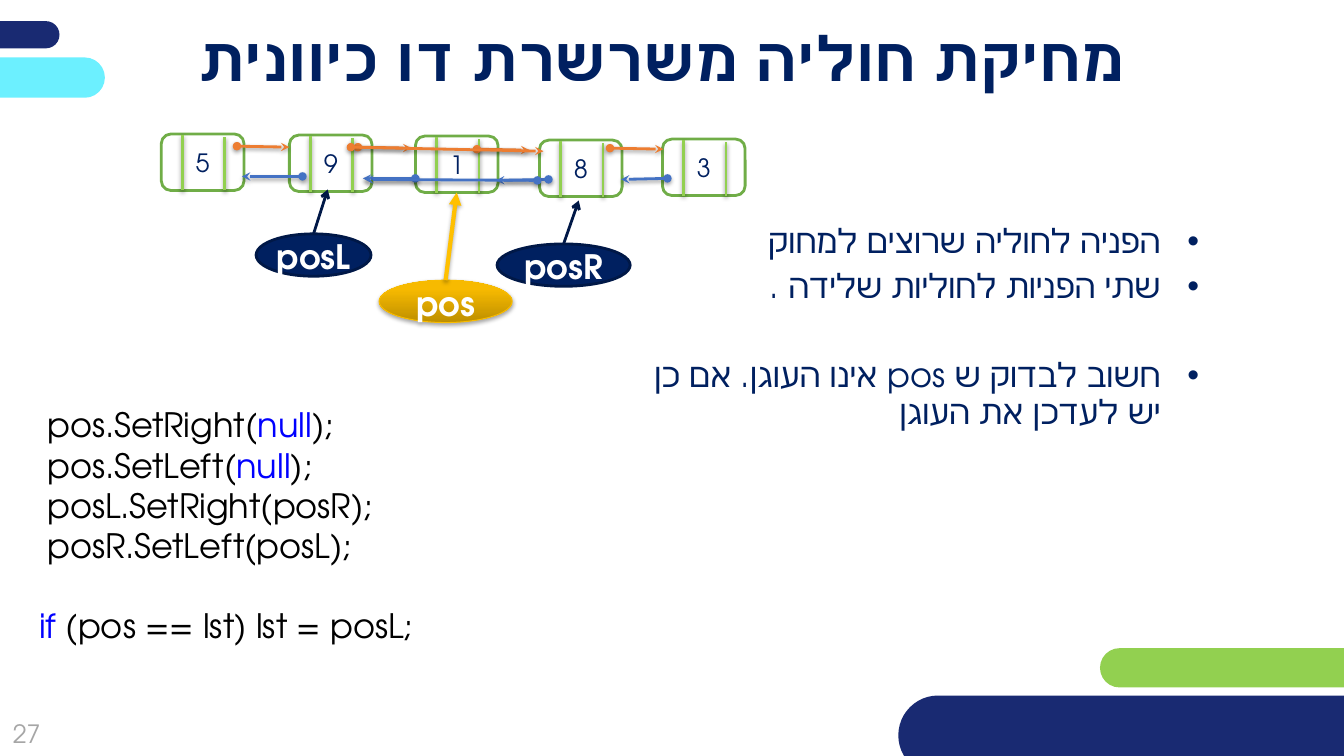
from dataclasses import dataclass
from lxml.etree import SubElement
from pptx import Presentation
from pptx.dml.color import RGBColor
from pptx.enum.shapes import MSO_CONNECTOR, MSO_SHAPE
from pptx.enum.text import MSO_ANCHOR, PP_ALIGN
from pptx.oxml.ns import qn
from pptx.util import Inches, Pt


@dataclass(frozen=True)
class Theme:
    font: str = "TeX Gyre Adventor"
    navy: str = "002060"
    navy_edge: str = "001847"
    band: str = "192A72"
    cyan: str = "6CF0FF"
    lime: str = "92D050"
    green: str = "70AD47"
    orange: str = "ED7D31"
    blue: str = "4472C4"
    gold: str = "FFC000"
    gold_edge: str = "F9BC00"
    gold_dark: str = "BE8F00"
    gold_light: str = "F7BA00"
    keyword: str = "0000FF"
    black: str = "000000"
    white: str = "FFFFFF"
    gray: str = "A6A6A6"
    title: int = 44
    body: int = 24
    small: int = 18


theme = Theme()
color = RGBColor.from_string
CELL = Inches(0.1)

deck = Presentation()
deck.slide_width, deck.slide_height = Inches(13.33), Inches(7.5)
slide = deck.slides.add_slide(deck.slide_layouts[6])
shapes = slide.shapes


def write(shape, lines, size, align=PP_ALIGN.LEFT, rtl=False, bold=False, anchor=MSO_ANCHOR.TOP):
    frame = shape.text_frame
    frame.word_wrap = True
    frame.vertical_anchor = anchor
    for index, line in enumerate(lines):
        paragraph = frame.add_paragraph() if index else frame.paragraphs[0]
        paragraph.alignment = align
        if rtl:
            paragraph._p.get_or_add_pPr().set("rtl", "1")
        for words, ink in line:
            run = paragraph.add_run()
            run.text = words
            run.font.size, run.font.bold = Pt(size), bold
            run.font.color.rgb = color(ink)
            run.font.name = theme.font
            SubElement(run._r.rPr, qn("a:cs"), typeface=theme.font)
    return frame


def set_shadow(shape, alpha, distance):
    properties = shape._element.spPr
    effects = properties.find(qn("a:effectLst"))
    if effects is None:
        effects = SubElement(properties, qn("a:effectLst"))
    if alpha:
        outer = SubElement(effects, qn("a:outerShdw"), blurRad=str(Pt(3.1)),
                           dist=str(Pt(distance)), dir="5400000", rotWithShape="0")
        ink = SubElement(outer, qn("a:srgbClr"), val=theme.black)
        SubElement(ink, qn("a:alpha"), val=str(alpha * 1000))


for left, top, width, height, paint in (
    (-26.6, 2.1, 32.5, 2.7, theme.band),
    (109.1, 64.3, 52.1, 3.9, theme.lime),
    (-22.1, 5.7, 32.5, 4, theme.cyan),
    (89.1, 69, 56.6, 7.9, theme.band),
):
    band = shapes.add_shape(MSO_SHAPE.ROUNDED_RECTANGLE, *(int(n * CELL) for n in (left, top, width, height)))
    band.adjustments[0] = 0.5
    band.shadow.inherit = False
    band.fill.solid()
    band.fill.fore_color.rgb = color(paint)
    band.line.fill.background()

page_number, heading, notes, unlink_code, anchor_code = (
    shapes.add_textbox(*(int(n * CELL) for n in area))
    for area in ((-1.8, 69.9, 8.9, 5.7), (11.2, 1.7, 107.2, 7.9), (63.1, 21.8, 57.8, 23.1),
                 (3.7, 39.6, 66.7, 17.2), (2.9, 59.5, 79.1, 5))
)
write(page_number, [[("27", theme.gray)]], theme.small, PP_ALIGN.CENTER, anchor=MSO_ANCHOR.MIDDLE)
write(heading, [[("מחיקת חוליה משרשרת דו כיוונית ", theme.navy)]], theme.title,
      PP_ALIGN.CENTER, rtl=True, bold=True, anchor=MSO_ANCHOR.MIDDLE)

points = ("הפניה לחוליה שרוצים למחוק ", "שתי הפניות לחוליות שלידה . ",
          "חשוב לבדוק ש pos אינו העוגן. אם כן יש לעדכן את העוגן ")
points_frame = write(notes, [[(point, theme.navy)] for point in points], theme.body, PP_ALIGN.RIGHT, rtl=True)
for paragraph in points_frame.paragraphs:
    indents = paragraph._p.get_or_add_pPr()
    indents.set("marL", str(Inches(0.48)))
    indents.set("indent", str(Inches(-0.38)))
    SubElement(indents, qn("a:buFont"), typeface="Arial")
    SubElement(indents, qn("a:buChar"), char="•")
    paragraph.line_spacing = 0.9
    paragraph.space_after = Pt(6)
points_frame.paragraphs[-1].space_before = Pt(32)

write(unlink_code, [
    [("pos.SetRight(", theme.black), ("null", theme.keyword), (");", theme.black)],
    [("pos.SetLeft(", theme.black), ("null", theme.keyword), (");", theme.black)],
    [("posL.SetRight(posR);", theme.black)],
    [("posR.SetLeft(posL);", theme.black)],
], theme.body)
write(anchor_code, [[("if", theme.keyword), (" (pos == lst) lst = posL;", theme.black)]], theme.body)

links = []
nodes = {}
for value, left, top in (("5", 16, 13.3), ("9", 28.7, 13.4), ("1", 41.2, 13.5),
                         ("8", 53.5, 13.9), ("3", 65.7, 13.8)):
    node = shapes.add_shape(MSO_SHAPE.ROUNDED_RECTANGLE, *(int(n * CELL) for n in (left, top, 8.2, 5.6)))
    nodes[value] = node
    node.fill.solid()
    node.fill.fore_color.rgb = color(theme.white)
    node.line.color.rgb = color(theme.green)
    node.line.width = Pt(2)
    frame = write(node, [[(value, theme.navy)]], theme.small, PP_ALIGN.CENTER, rtl=True, anchor=MSO_ANCHOR.MIDDLE)
    for offset, gap in ((6.3, 0.3), (2.1, 0.1)):
        links.append((left + offset, top + gap, left + offset, top + 5.6, theme.lime, 2, None, None, 38, None, None))

pointers = {}
for name, left, top, width, edge, thickness in (
    ("posR", 49.3, 24.2, 13.2, theme.navy_edge, 2),
    ("posL", 25.4, 23.2, 11.4, theme.navy_edge, 2),
    ("pos", 37.6, 27.8, 13.2, theme.gold_edge, 0.75),
):
    pointer = shapes.add_shape(MSO_SHAPE.OVAL, *(int(n * CELL) for n in (left, top, width, 4.2)))
    pointers[name] = pointer
    pointer.fill.solid()
    pointer.fill.fore_color.rgb = color(theme.navy)
    pointer.line.color.rgb = color(edge)
    pointer.line.width = Pt(thickness)
    frame = write(pointer, [[(name, theme.white)]], theme.body, PP_ALIGN.CENTER,
                  rtl=True, bold=True, anchor=MSO_ANCHOR.MIDDLE)
    frame.paragraphs[0].line_spacing = 1.07
    frame.paragraphs[0].space_after = Pt(8)

for box in (*nodes.values(), *pointers.values()):
    box.shadow.inherit = False
    frame = box.text_frame
    frame.margin_left = frame.margin_right = frame.margin_top = frame.margin_bottom = 0

target = pointers["pos"]
target.fill.gradient()
target.fill.gradient_angle = 90
for stop, paint, place in zip(target.fill.gradient_stops, (theme.gold_dark, theme.gold_light), (0, 0.8)):
    stop.color.rgb = color(paint)
    stop.position = place
set_shadow(target, 35, 1.8)

for x1, y1, x2, y2, paint in (
    (23.5, 14.5, 28.7, 14.6, theme.orange),
    (35.5, 14.6, 40.8, 14.7, theme.orange),
    (60.5, 14.7, 65.8, 14.8, theme.orange),
    (66.2, 17.7, 61.6, 17.8, theme.blue),
    (54.4, 17.8, 49.2, 17.9, theme.blue),
    (30, 17.5, 24, 17.5, theme.blue),
    (47.3, 14.8, 52.5, 14.9, theme.orange),
    (41.2, 17.7, 36, 17.7, theme.blue),
    (34.8, 14.6, 53.9, 15, theme.orange),
    (53.3, 17.9, 36.2, 17.8, theme.blue),
):
    links.append((x1, y1, x2, y2, paint, 2, "oval", "stealth", 38, None, None))
links += [
    (55.9, 24.2, 57.4, 19.9, theme.navy_edge, 2, None, "arrow", 0, pointers["posR"], None),
    (31.1, 23.2, 32.5, 18.8, theme.navy_edge, 2, None, "arrow", 0, pointers["posL"], None),
    (44.2, 27.8, 45.3, 19.1, theme.gold, 3, None, "triangle", 35, target, nodes["1"]),
]

for x1, y1, x2, y2, paint, thickness, head, tail, alpha, origin, goal in links:
    link = shapes.add_connector(MSO_CONNECTOR.STRAIGHT, *(int(n * CELL) for n in (x1, y1, x2, y2)))
    link.line.color.rgb = color(paint)
    link.line.width = Pt(thickness)
    for tag, style in (("a:headEnd", head), ("a:tailEnd", tail)):
        if style:
            SubElement(link.line._get_or_add_ln(), qn(tag), type=style)
    set_shadow(link, alpha, 1.6)
    if origin:
        link.begin_connect(origin, 0)
    if goal:
        link.end_connect(goal, 2)

deck.save("out.pptx")
